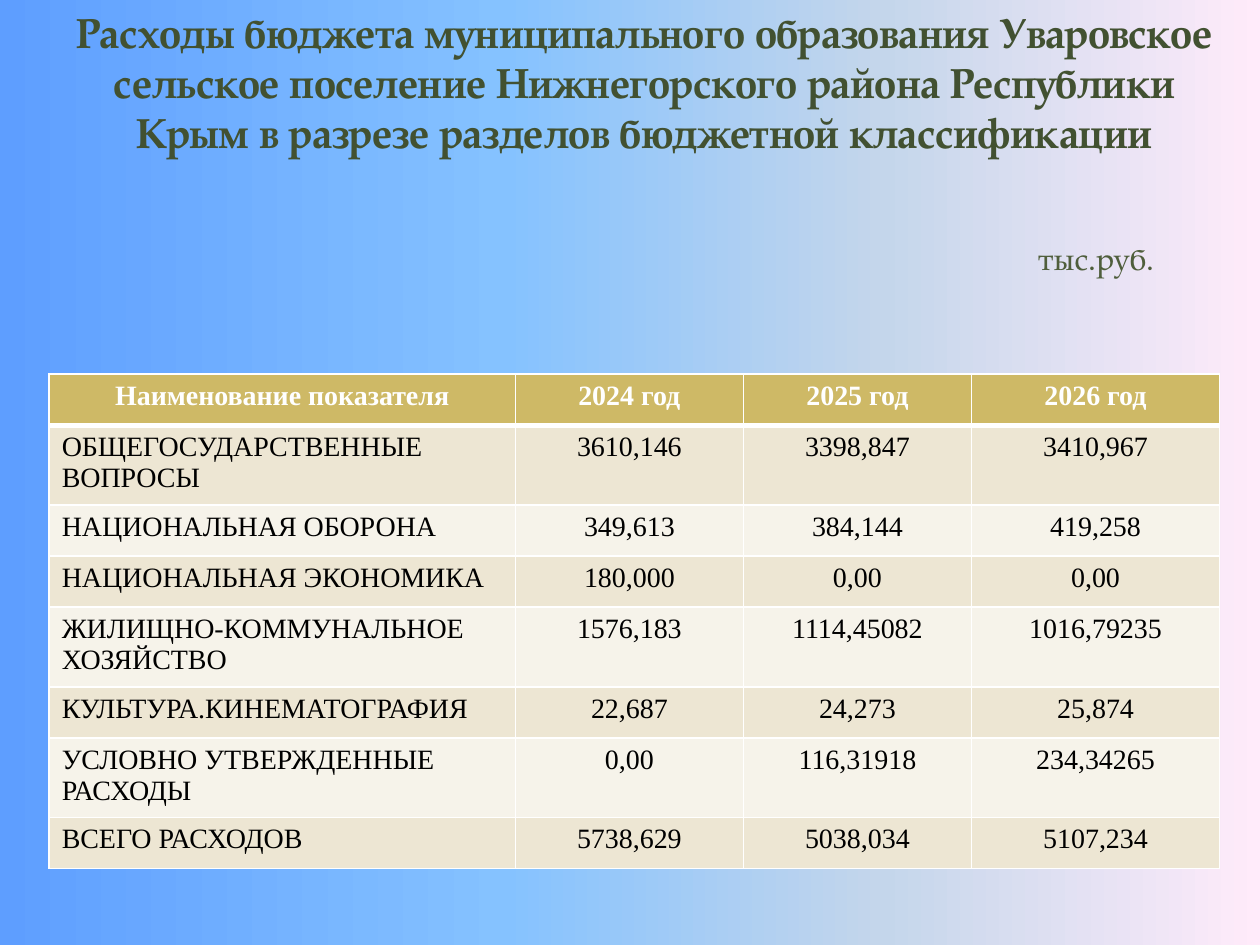
from lxml.etree import SubElement as add_node
from pptx import Presentation
from pptx.dml.color import RGBColor as Color
from pptx.enum.text import MSO_AUTO_SIZE as AutoSize, PP_ALIGN as Align
from pptx.oxml.ns import qn
from pptx.util import Inches, Pt

WIDTH, HEIGHT = Inches(10), Inches(7.5)
HEADING_FONT, TABLE_FONT = "TeX Gyre Pagella", "Times New Roman"
COLORS = {
    "title": "425131", "unit": "4F5E3C", "header": "CEB966",
    "odd": "EDE6D3", "even": "F6F3EA", "white": "FFFFFF", "black": "000000",
}
BACKDROP = {0: "5E9EFF", 40: "85C2FF", 70: "C4D6EB", 100: "FFEBFA"}
TITLE = ("Расходы бюджета муниципального образования Уваровское сельское "
         "поселение Нижнегорского района Республики Крым в разрезе разделов "
         "бюджетной классификации")
COLUMN_SHARES = (3.7, 1.81, 1.81, 1.97)
EXPENSES = (
    ("Наименование показателя", "2024 год", "2025 год", "2026 год"),
    ("ОБЩЕГОСУДАРСТВЕННЫЕ ВОПРОСЫ", "3610,146", "3398,847", "3410,967"),
    ("НАЦИОНАЛЬНАЯ ОБОРОНА", "349,613", "384,144", "419,258"),
    ("НАЦИОНАЛЬНАЯ ЭКОНОМИКА", "180,000", "0,00", "0,00"),
    ("ЖИЛИЩНО-КОММУНАЛЬНОЕ ХОЗЯЙСТВО", "1576,183", "1114,45082", "1016,79235"),
    ("КУЛЬТУРА.КИНЕМАТОГРАФИЯ", "22,687", "24,273", "25,874"),
    ("УСЛОВНО УТВЕРЖДЕННЫЕ РАСХОДЫ", "0,00", "116,31918", "234,34265"),
    ("ВСЕГО РАСХОДОВ", "5738,629", "5038,034", "5107,234"),
)


def area(left, top, width, height):
    return (int(WIDTH * left / 100), int(HEIGHT * top / 100),
            int(WIDTH * width / 100), int(HEIGHT * height / 100))


def write(frame, text, font, size, color, bold=False, align=Align.LEFT):
    para = frame.paragraphs[0]
    para.text = text
    para.alignment = align
    para.font.name = font
    para.font.size = Pt(size)
    para.font.bold = bold
    para.font.color.rgb = Color.from_string(COLORS[color])


def paint_background(page):
    fill = page.background.fill
    fill.gradient()
    fill.gradient_angle = 0
    stops = page.background._cSld.find(".//" + qn("a:gsLst"))
    stops.clear()
    for percent, color in BACKDROP.items():
        stop = add_node(stops, qn("a:gs"), pos=str(percent * 1000))
        add_node(stop, qn("a:srgbClr"), val=color)


def add_label(page, box, text, size, color, wrap=True, **style):
    frame = page.shapes.add_textbox(*box).text_frame
    frame.word_wrap = wrap
    frame.auto_size = AutoSize.SHAPE_TO_FIT_TEXT
    write(frame, text, HEADING_FONT, size, color, **style)


def add_borders(cell, bottom):
    properties = cell._tc.get_or_add_tcPr()
    for side, points in (("L", 1), ("R", 1), ("T", 1), ("B", bottom)):
        line = add_node(properties, qn(f"a:ln{side}"), w=str(Pt(points)))
        fill = add_node(line, qn("a:solidFill"))
        add_node(fill, qn("a:srgbClr"), val=COLORS["white"])


def add_expense_table(page, box):
    table = page.shapes.add_table(len(EXPENSES), len(COLUMN_SHARES), *box).table
    for column, share in zip(table.columns, COLUMN_SHARES):
        column.width = int(box[2] * share / sum(COLUMN_SHARES))
    for row, values in enumerate(EXPENSES):
        header = row == 0
        fill = "header" if header else "odd" if row % 2 else "even"
        for column, value in enumerate(values):
            cell = table.cell(row, column)
            add_borders(cell, bottom=3 if header else 1)
            cell.fill.solid()
            cell.fill.fore_color.rgb = Color.from_string(COLORS[fill])
            centered = header or column > 0
            write(cell.text_frame, value, TABLE_FONT, 16,
                  "white" if header else "black", bold=header,
                  align=Align.CENTER if centered else Align.LEFT)


def main():
    deck = Presentation()
    deck.slide_width, deck.slide_height = WIDTH, HEIGHT
    page = deck.slides.add_slide(deck.slide_layouts[6])
    paint_background(page)
    add_label(page, area(4.3, 0, 93.7, 17.47), TITLE, 24, "title",
              bold=True, align=Align.CENTER)
    add_expense_table(page, area(3.9, 39.6, 92.9, 43.2))
    add_label(page, area(81.4, 24.67, 11.4, 5.33), "тыс.руб.", 18, "unit",
              wrap=False)
    deck.save("out.pptx")


if __name__ == "__main__":
    main()
